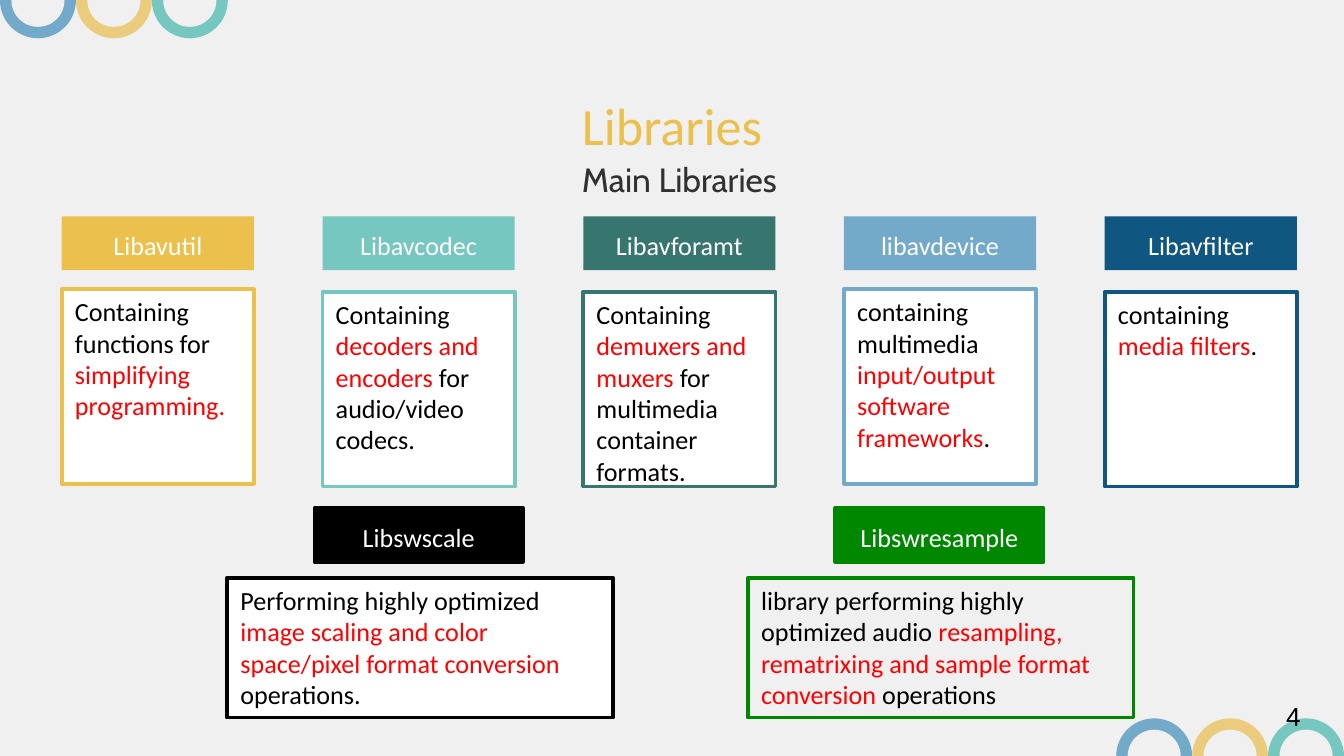
from dataclasses import dataclass

from pptx import Presentation
from pptx import util as u
from pptx.dml.color import RGBColor
from pptx.enum import shapes, text

SCALE = 4572


@dataclass(frozen=True)
class Theme:
    page: str = "F0F0F0"
    white: str = "FFFFFF"
    black: str = "000000"
    accent: str = "FF0000"
    subtitle: str = "313131"
    gold: str = "EBC04C"
    sand: str = "EBCC7D"
    aqua: str = "75C7BF"
    teal: str = "37756F"
    sky: str = "73A9C9"
    navy: str = "0F5680"
    green: str = "008700"
    font: str = "Calibri"
    subtitle_font: str = "Cabin"
    number_font: str = "Arial"
    title_size: int = 28
    subtitle_size: int = 18
    body_size: int = 14
    border: int = 2


THEME = Theme()

LIBRARIES = [
    ("Libavutil", THEME.gold, 430, "Containing functions for *simplifying programming."),
    ("Libavcodec", THEME.aqua, 434,
     "Containing *decoders and encoders *for audio/video codecs."),
    ("Libavforamt", THEME.teal, 434,
     "Containing *demuxers and muxers *for multimedia container formats."),
    ("libavdevice", THEME.sky, 430,
     "containing multimedia *input/output software frameworks*."),
    ("Libavfilter", THEME.navy, 434, "containing *media filters*."),
]

CONVERTERS = [
    ("Libswscale", THEME.black, THEME.white,
     "Performing highly optimized *image scaling and color space/pixel format conversion *operations."),
    ("Libswresample", THEME.green, None,
     "library performing highly optimized audio *resampling, rematrixing and sample format conversion* operations"),
]


def px(*lengths):
    return [u.Emu(length * SCALE) for length in lengths]


class SlideBuilder:
    """Draws the elements of one slide in a shared theme."""

    def __init__(self, slide, theme):
        self.slide = slide
        self.theme = theme
        slide.background.fill.solid()
        slide.background.fill.fore_color.rgb = RGBColor.from_string(theme.page)

    def style(self, span, color, size=None, font=None):
        span.font.name = font or self.theme.font
        span.font.size = u.Pt(size or self.theme.body_size)
        span.font.color.rgb = RGBColor.from_string(color)

    def frame(self, box, anchor, vertical_inset):
        frame = box.text_frame
        frame.word_wrap = True
        frame.auto_size = text.MSO_AUTO_SIZE.NONE
        frame.vertical_anchor = anchor
        frame.margin_left, frame.margin_right = px(20, 20)
        frame.margin_top, frame.margin_bottom = px(vertical_inset, vertical_inset)
        return frame

    def shape(self, kind, place, fill=None, line=None):
        shape = self.slide.shapes.add_shape(kind, *px(*place))
        shape.shadow.inherit = False
        if fill:
            shape.fill.solid()
            shape.fill.fore_color.rgb = RGBColor.from_string(fill)
        else:
            shape.fill.background()
        if line:
            shape.line.color.rgb = RGBColor.from_string(line)
            shape.line.width = u.Pt(self.theme.border)
        else:
            shape.line.fill.background()
        return shape

    def rings(self, left, middle):
        size, band = 113, 17
        hole = size - 2 * band
        for index, color in enumerate((self.theme.sky, self.theme.sand, self.theme.aqua)):
            x, y = left + index * size, middle - size // 2
            self.shape(shapes.MSO_SHAPE.OVAL, (x, y, size, size), color)
            self.shape(shapes.MSO_SHAPE.OVAL, (x + band, y + band, hole, hole), self.theme.page)

    def heading(self, box, place, words, anchor, color, size, font):
        box.left, box.top, box.width, box.height = px(*place)
        para = self.frame(box, anchor, 20).paragraphs[0]
        para.text = words
        para.alignment = text.PP_ALIGN.CENTER
        para.space_before = u.Pt(0)
        self.style(para.runs[0], color, size, font)
        return para

    def label(self, place, words, fill, line=None):
        box = self.shape(shapes.MSO_SHAPE.RECTANGLE, place, fill, line)
        para = self.frame(box, text.MSO_ANCHOR.TOP, 20).paragraphs[0]
        para.text = words
        para.alignment = text.PP_ALIGN.CENTER
        para.space_after = u.Pt(16)
        self.style(para.runs[0], self.theme.white)

    def card(self, place, words, line, fill):
        box = self.shape(shapes.MSO_SHAPE.RECTANGLE, place, fill, line)
        para = self.frame(box, text.MSO_ANCHOR.TOP, 10).paragraphs[0]
        para.alignment = text.PP_ALIGN.LEFT
        for index, part in enumerate(words.split("*")):
            span = para.add_run()
            span.text = part
            self.style(span, self.theme.accent if index % 2 else self.theme.black)

    def page_number(self, place, number):
        box = self.slide.shapes.add_textbox(*px(*place))
        frame = box.text_frame
        frame.text = number
        frame.word_wrap = False
        frame.auto_size = text.MSO_AUTO_SIZE.SHAPE_TO_FIT_TEXT
        self.style(frame.paragraphs[0].runs[0], self.theme.black, font=self.theme.number_font)


def main():
    deck = Presentation()
    deck.slide_width, deck.slide_height = px(2000, 1125)
    slide = deck.slides.add_slide(deck.slide_layouts[0])
    page = SlideBuilder(slide, THEME)

    page.rings(0, 0)
    page.rings(1661, 1125)
    page.heading(slide.shapes.title, (158, 118, 1684, 80), "Libraries",
                 text.MSO_ANCHOR.TOP, THEME.gold, THEME.title_size, THEME.font)
    subtitle = page.heading(slide.placeholders[1], (546, 196, 906, 140), "Main Libraries",
                            text.MSO_ANCHOR.MIDDLE, THEME.subtitle, THEME.subtitle_size,
                            THEME.subtitle_font)
    properties = subtitle._p.get_or_add_pPr()
    properties.set("marL", str(u.Inches(0.5)))
    properties.set("indent", str(u.Inches(-0.38)))

    for index, (name, color, top, words) in enumerate(LIBRARIES):
        left = 92 + 388 * index
        page.label((left, 322, 286, 80), name, color)
        page.card((left, top, 286, 290), words, color, THEME.white)

    for index, (name, color, fill, words) in enumerate(CONVERTERS):
        offset = 775 * index
        page.label((468 + offset, 756, 310, 80), name, color, color)
        page.card((338 + offset, 860, 574, 208), words, color, fill)

    page.page_number((1894, 1032, 62, 68), "4")
    deck.save("out.pptx")


if __name__ == "__main__":
    main()
